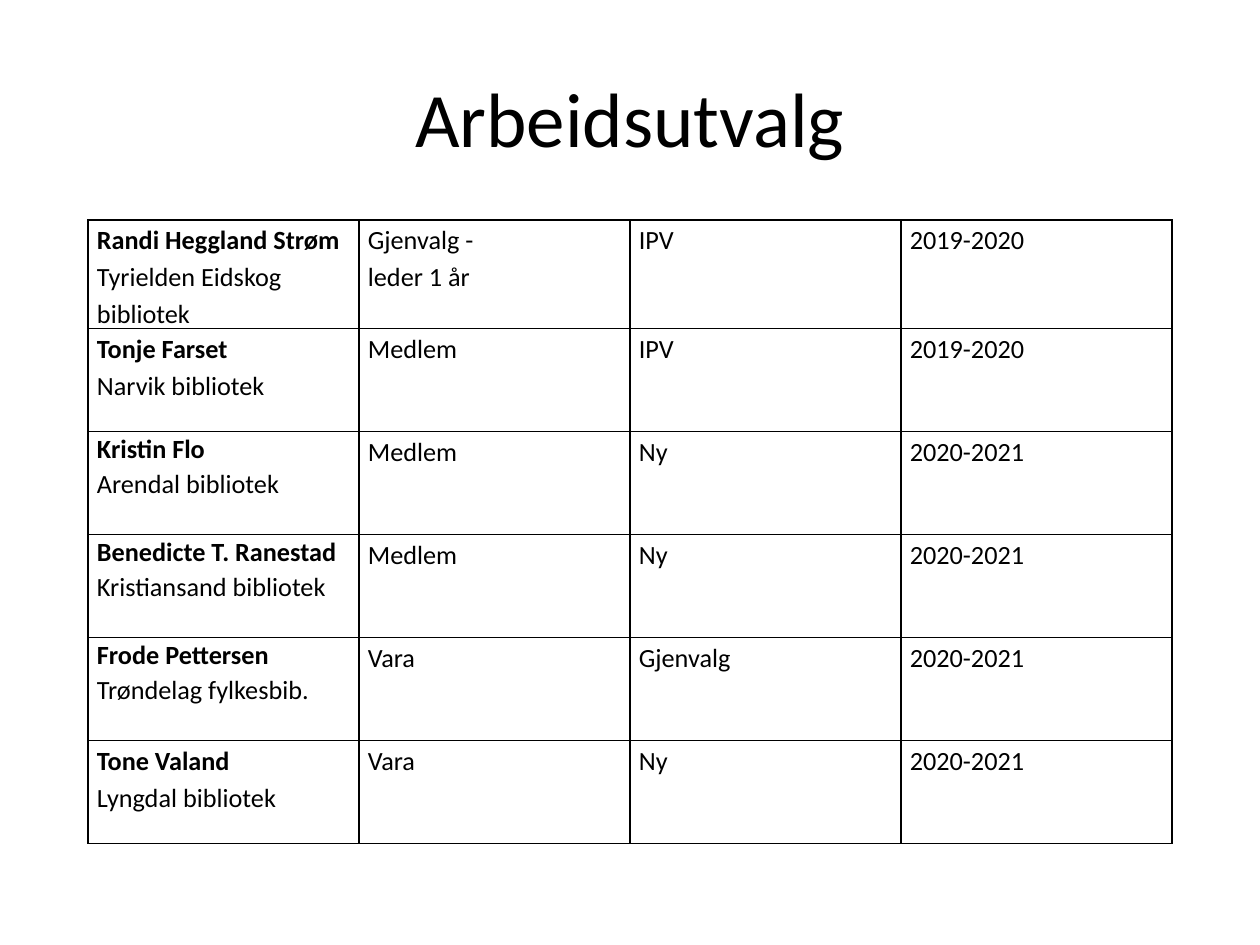
from dataclasses import dataclass

from lxml import etree
from pptx import Presentation
from pptx import util as u
from pptx.dml.color import RGBColor
from pptx.enum import text
from pptx.oxml import ns

EMU_PER_PX = 914400 // 126


@dataclass(frozen=True)
class Theme:
    font: str = "Calibri"
    ink: str = "000000"
    title_size: int = 44
    body_size: int = 15
    border_width: int = 1
    line_spacing: float = 1.15
    tight_spacing: float = 1.07
    tight_space_after: int = 21


THEME = Theme()

# name, library, role lines, status, period, tight line spacing
MEMBERS = [
    ("Randi Heggland Strøm", "Tyrielden Eidskog bibliotek",
     ["Gjenvalg -", "leder 1 år"], "IPV", "2019-2020", False),
    ("Tonje Farset", "Narvik bibliotek", ["Medlem"], "IPV", "2019-2020", False),
    ("Kristin Flo", "Arendal bibliotek", ["Medlem"], "Ny", "2020-2021", True),
    ("Benedicte T. Ranestad", "Kristiansand bibliotek",
     ["Medlem"], "Ny", "2020-2021", True),
    ("Frode Pettersen", "Trøndelag fylkesbib.",
     ["Vara"], "Gjenvalg", "2020-2021", True),
    ("Tone Valand", "Lyngdal bibliotek", ["Vara"], "Ny", "2020-2021", False),
]
COLUMNS = 4


def px(length):
    return u.Emu(length * EMU_PER_PX)


def style_run(run, size, bold=False):
    run.font.name = THEME.font
    run.font.size = u.Pt(size)
    run.font.bold = bold
    run.font.color.rgb = RGBColor.from_string(THEME.ink)


def add_title(slide, wording):
    frame = slide.shapes.add_textbox(px(63), px(38), px(1134), px(157)).text_frame
    frame.word_wrap = True
    frame.vertical_anchor = text.MSO_ANCHOR.MIDDLE
    frame.text = wording
    heading = frame.paragraphs[0]
    heading.alignment = text.PP_ALIGN.CENTER
    style_run(heading.runs[0], THEME.title_size)


def set_borders(cell):
    properties = cell._tc.get_or_add_tcPr()
    for position, side in enumerate(("lnL", "lnR", "lnT", "lnB")):
        line = etree.Element(ns.qn(f"a:{side}"), w=str(u.Pt(THEME.border_width)))
        fill = etree.SubElement(line, ns.qn("a:solidFill"))
        etree.SubElement(fill, ns.qn("a:srgbClr"), val=THEME.ink)
        properties.insert(position, line)


def fill_cell(cell, lines, bold_first=False, tight=False):
    """Write the lines as one paragraph, parted by line breaks."""
    cell.margin_left = cell.margin_right = px(9)
    cell.margin_top = cell.margin_bottom = 0
    cell.vertical_anchor = text.MSO_ANCHOR.TOP
    cell.fill.background()
    set_borders(cell)
    paragraph = cell.text_frame.paragraphs[0]
    paragraph.font.size = u.Pt(THEME.body_size)
    paragraph.line_spacing = THEME.tight_spacing if tight else THEME.line_spacing
    if tight:
        paragraph.space_after = u.Pt(THEME.tight_space_after)
    for index, line in enumerate(lines):
        if index:
            paragraph.add_line_break()
        run = paragraph.add_run()
        run.text = line
        style_run(run, THEME.body_size, bold_first and index == 0)


def add_member_table(slide, members):
    first_height, row_height, column_width = 108, 103, 271
    height = first_height + row_height * (len(members) - 1)
    table = slide.shapes.add_table(
        len(members), COLUMNS, px(88), px(220),
        px(column_width * COLUMNS), px(height)).table
    table.first_row = table.horz_banding = False
    for column in table.columns:
        column.width = px(column_width)
    for index, (name, library, role, status, period, tight) in enumerate(members):
        table.rows[index].height = px(row_height if index else first_height)
        fill_cell(table.cell(index, 0), [name, library], bold_first=True, tight=tight)
        for column, lines in enumerate((role, [status], [period]), start=1):
            fill_cell(table.cell(index, column), lines)


def main():
    deck = Presentation()
    deck.slide_width, deck.slide_height = px(1260), px(945)
    slide = deck.slides.add_slide(deck.slide_layouts[6])
    add_title(slide, "Arbeidsutvalg")
    add_member_table(slide, MEMBERS)
    deck.save("out.pptx")


if __name__ == "__main__":
    main()
